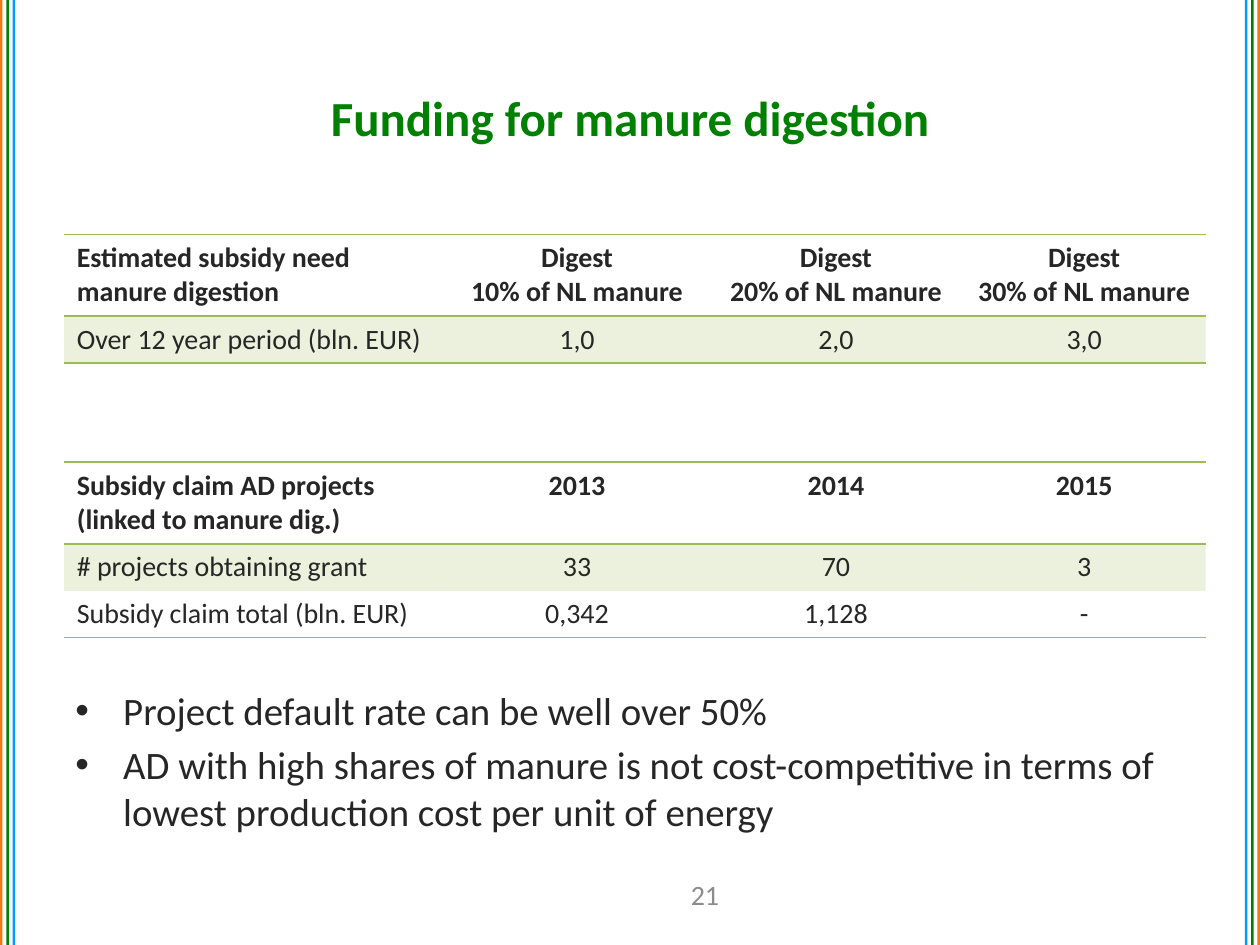
from dataclasses import dataclass

from lxml.etree import SubElement
from pptx import Presentation
from pptx.dml.color import RGBColor
from pptx.enum.shapes import MSO_SHAPE as Shape
from pptx.enum.text import MSO_ANCHOR as Anchor, PP_ALIGN as Align
from pptx.oxml.ns import qn
from pptx.util import Inches, Pt

WIDTH, HEIGHT = 10, 7.5
COLUMN_WIDTHS = (3.02, 2.1, 2.01, 1.93)
HEADER_HEIGHT, ROW_HEIGHT = 0.65, 0.37
NO_STYLE = "{2D5ABB26-0587-4C30-8999-92F81FD0307C}"


def color(value):
    return RGBColor.from_string(value)


@dataclass
class SlideBuilder:
    page: object
    font: str = "Calibri"
    ink: str = "262626"
    green: str = "008000"
    accent: str = "9BBB59"

    def place(self, item, x, y, width, height):
        item.left, item.width = Inches(x * WIDTH), Inches(width * WIDTH)
        item.top, item.height = Inches(y * HEIGHT), Inches(height * HEIGHT)

    def add_text(self, para, text, size, ink=None, bold=False, align=Align.LEFT):
        para.alignment = align
        span = para.add_run()
        span.text = text
        span.font.name, span.font.size, span.font.bold = self.font, Pt(size), bold
        span.font.color.rgb = color(ink or self.ink)

    def title(self, text):
        box = self.page.shapes.title
        self.place(box, 0.05, 0.04, 0.9, 1 / 6)
        box.text_frame.vertical_anchor = Anchor.MIDDLE
        self.add_text(box.text_frame.paragraphs[0], text, 28, self.green, True, Align.CENTER)

    def text_frame(self, x, y, width, height, anchor=Anchor.TOP):
        box = self.page.shapes.add_textbox(0, 0, 0, 0)
        self.place(box, x, y, width, height)
        box.text_frame.word_wrap = True
        box.text_frame.vertical_anchor = anchor
        return box.text_frame

    def stripe(self, x, fill):
        bar = self.page.shapes.add_shape(Shape.RECTANGLE, 0, 0, 0, 0)
        self.place(bar, x, 0, 0.002, 1)
        bar.shadow.inherit = False
        bar.fill.solid()
        bar.fill.fore_color.rgb = color(fill)
        bar.line.fill.background()

    def border(self, cell, side):
        line = SubElement(cell._tc.get_or_add_tcPr(), qn(f"a:{side}"), w=str(Pt(1)))
        fill = SubElement(line, qn("a:solidFill"))
        SubElement(fill, qn("a:srgbClr"), val=self.accent)

    def shade(self, cell):
        cell.fill.solid()
        cell.fill.fore_color.rgb = color(self.accent)
        tint = cell._tc.tcPr.find(qn("a:solidFill")).find(qn("a:srgbClr"))
        SubElement(tint, qn("a:alpha"), val="20000")

    def table(self, x, y, rows):
        frame = self.page.shapes.add_table(len(rows), len(COLUMN_WIDTHS), 0, 0, 0, 0)
        heights = [HEADER_HEIGHT] + [ROW_HEIGHT] * (len(rows) - 1)
        self.place(frame, x, y, sum(COLUMN_WIDTHS) / WIDTH, sum(heights) / HEIGHT)
        table = frame.table
        table._tbl.tblPr.find(qn("a:tableStyleId")).text = NO_STYLE
        for column, width in zip(table.columns, COLUMN_WIDTHS):
            column.width = Inches(width)
        for row, height in zip(table.rows, heights):
            row.height = Inches(height)
        for r, values in enumerate(rows):
            for c, value in enumerate(values):
                self.cell(table.cell(r, c), value, r, c, r == len(rows) - 1)

    def cell(self, cell, value, row, column, last):
        align = Align.CENTER if column else Align.LEFT
        frame = cell.text_frame
        for index, line in enumerate(value.split("\n")):
            para = frame.add_paragraph() if index else frame.paragraphs[0]
            self.add_text(para, line, 16, bold=row == 0, align=align)
        if row == 0:
            self.border(cell, "lnT")
        if row == 0 or last:
            self.border(cell, "lnB")
        if row % 2:
            self.shade(cell)
        else:
            cell.fill.background()

    def bullets(self, x, y, width, height, items):
        frame = self.text_frame(x, y, width, height)
        for index, item in enumerate(items):
            para = frame.add_paragraph() if index else frame.paragraphs[0]
            props = para._p.get_or_add_pPr()
            props.set("marL", str(Inches(0.38)))
            props.set("indent", str(-Inches(0.38)))
            SubElement(props, qn("a:buFont"), typeface="Arial")
            SubElement(props, qn("a:buChar"), char="•")
            if index:
                para.space_before = Pt(4.4)
            self.add_text(para, item, 22.2)

    def page_number(self, text):
        frame = self.text_frame(0.516, 0.92, 0.087, 0.053, Anchor.MIDDLE)
        self.add_text(frame.paragraphs[0], text, 16, "8C8C8C", align=Align.CENTER)


def main():
    deck = Presentation()
    deck.slide_width, deck.slide_height = Inches(WIDTH), Inches(HEIGHT)
    slide = SlideBuilder(deck.slides.add_slide(deck.slide_layouts[5]))

    for index, fill in enumerate(("F67616", "008000", "0099FF")):
        offset = index * 0.005
        slide.stripe(offset, fill)
        slide.stripe(0.998 - offset, fill)

    slide.title("Funding for manure digestion")
    shares = [f"Digest\n{share}% of NL manure" for share in (10, 20, 30)]
    slide.table(0.051, 0.248, [
        ["Estimated subsidy need manure digestion", *shares],
        ["Over 12 year period (bln. EUR)", "1,0", "2,0", "3,0"],
    ])
    slide.table(0.051, 0.489, [
        ["Subsidy claim AD projects (linked to manure dig.)", "2013", "2014", "2015"],
        ["# projects obtaining grant", "33", "70", "3"],
        ["Subsidy claim total (bln. EUR)", "0,342", "1,128", "-"],
    ])
    slide.bullets(0.05, 0.72, 0.9, 0.147, [
        "Project default rate can be well over 50%",
        "AD with high shares of manure is not cost-competitive in terms of "
        "lowest production cost per unit of energy",
    ])
    slide.page_number("21")
    deck.save("out.pptx")


if __name__ == "__main__":
    main()
